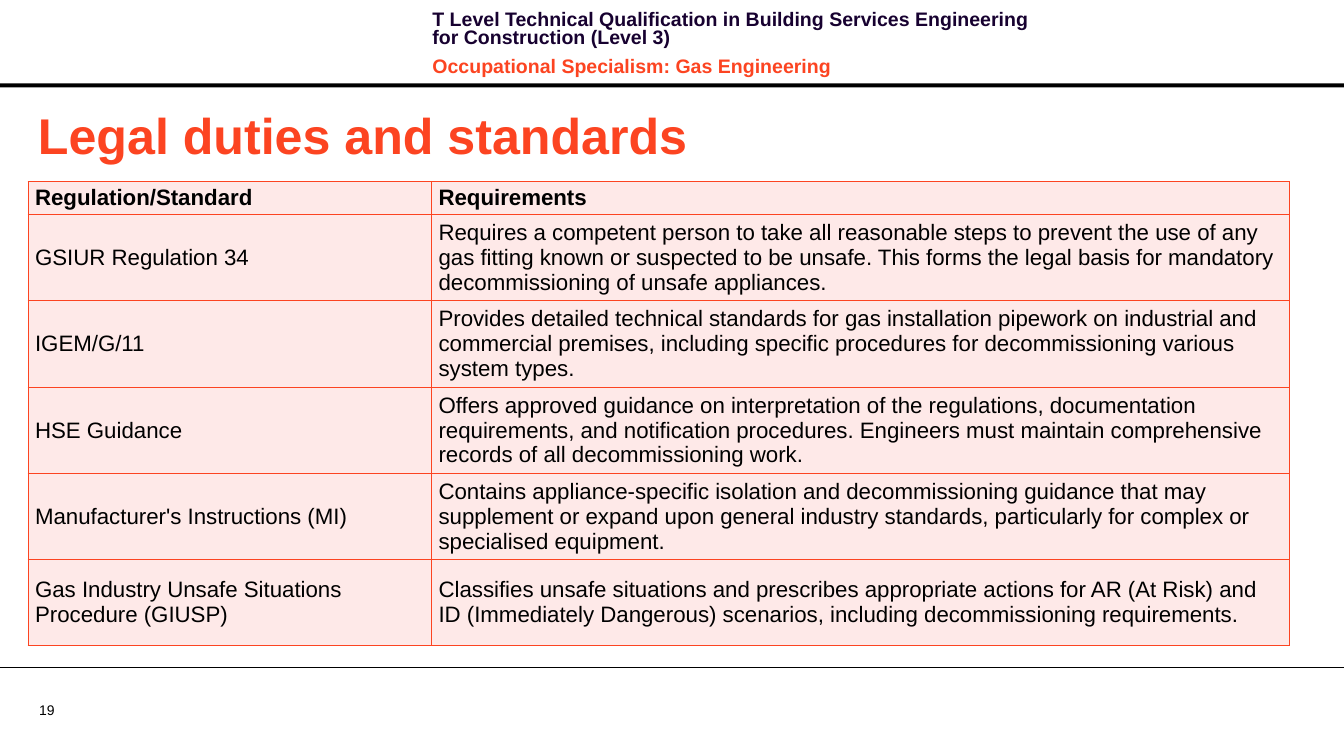
from dataclasses import dataclass

from lxml import etree
from pptx import Presentation
from pptx.dml.color import RGBColor
from pptx.enum.shapes import MSO_CONNECTOR, MSO_SHAPE
from pptx.enum.text import MSO_ANCHOR
from pptx.oxml.ns import qn
from pptx.slide import Slide
from pptx.table import _Cell
from pptx.text.text import _Paragraph
from pptx.util import Emu, Pt

PX = 9144
FONT = "Arial"
BLACK = RGBColor(0x00, 0x00, 0x00)
NAVY = RGBColor(0x17, 0x01, 0x30)
ORANGE = RGBColor(0xFC, 0x44, 0x21)
PINK = RGBColor(0xFE, 0xE9, 0xE8)
TOP, MIDDLE = MSO_ANCHOR.TOP, MSO_ANCHOR.MIDDLE
RECTANGLE = MSO_SHAPE.RECTANGLE
STRAIGHT = MSO_CONNECTOR.STRAIGHT

SLIDE_W, SLIDE_H = 1339, 748
TABLE_X, TABLE_Y = 28, 181
COLUMN_WIDTHS = (402, 855)
HEADER_H, ROW_H = 26, 85


@dataclass
class Line:
    text: str
    size: int
    color: RGBColor
    bold: bool = True


@dataclass
class TextBox:
    x: int
    y: int
    w: int
    h: int
    lines: list[Line]
    inset_x: int = 10
    inset_y: int = 5
    anchor: MSO_ANCHOR = MIDDLE
    line_pt: float | None = None
    gap_pt: int = 0


@dataclass
class Row:
    standard: str
    requirements: str


TEXT_BOXES = [
    TextBox(421, 7, 637, 64, [
        Line("T Level Technical Qualification in Building Services Engineering "
             "for Construction (Level 3)", 14, NAVY),
        Line("Occupational Specialism: Gas Engineering", 14, ORANGE),
    ], anchor=TOP, line_pt=13.1, gap_pt=4),
    TextBox(28, 98, 1272, 71, [Line("Legal duties and standards", 36, ORANGE)]),
    TextBox(39, 699, 64, 17, [Line("19", 10, BLACK, False)], inset_x=0, inset_y=0),
]

ROWS = [
    Row("Regulation/Standard", "Requirements"),
    Row("GSIUR Regulation 34",
        "Requires a competent person to take all reasonable steps to prevent the use of any "
        "gas fitting known or suspected to be unsafe. This forms the legal basis for "
        "mandatory decommissioning of unsafe appliances."),
    Row("IGEM/G/11",
        "Provides detailed technical standards for gas installation pipework on industrial "
        "and commercial premises, including specific procedures for decommissioning various "
        "system types."),
    Row("HSE Guidance",
        "Offers approved guidance on interpretation of the regulations, documentation "
        "requirements, and notification procedures. Engineers must maintain comprehensive "
        "records of all decommissioning work."),
    Row("Manufacturer's Instructions (MI)",
        "Contains appliance-specific isolation and decommissioning guidance that may "
        "supplement or expand upon general industry standards, particularly for complex or "
        "specialised equipment."),
    Row("Gas Industry Unsafe Situations Procedure (GIUSP)",
        "Classifies unsafe situations and prescribes appropriate actions for AR (At Risk) and "
        "ID (Immediately Dangerous) scenarios, including decommissioning requirements."),
]


def px(n: int) -> Emu:
    return Emu(n * PX)


def write_line(p: _Paragraph, line: Line) -> None:
    p.text = line.text
    p.font.name = FONT
    p.font.size = Pt(line.size)
    p.font.bold = line.bold
    p.font.color.rgb = line.color


def draw_rules(s: Slide) -> None:
    bar = s.shapes.add_shape(RECTANGLE, px(0), px(83), px(SLIDE_W), px(4))
    bar.shadow.inherit = False
    bar.fill.solid()
    bar.fill.fore_color.rgb = BLACK
    bar.line.fill.background()
    rule = s.shapes.add_connector(STRAIGHT, px(0), px(665), px(SLIDE_W), px(665))
    rule.line.color.rgb = BLACK
    rule.line.width = Pt(0.75)
    etree.SubElement(rule._element.spPr, qn("a:effectLst"))


def draw_text(s: Slide, box: TextBox) -> None:
    sp = s.shapes.add_textbox(px(box.x), px(box.y), px(box.w), px(box.h))
    tf = sp.text_frame
    tf.word_wrap = True
    tf.vertical_anchor = box.anchor
    tf.margin_left = tf.margin_right = px(box.inset_x)
    tf.margin_top = tf.margin_bottom = px(box.inset_y)
    for i, line in enumerate(box.lines):
        p = tf.add_paragraph() if i else tf.paragraphs[0]
        write_line(p, line)
        p.space_before = Pt(box.gap_pt if i else 0)
        p.space_after = Pt(box.gap_pt)
        if box.line_pt:
            p.line_spacing = Pt(box.line_pt)


def style_cell(cell: _Cell) -> None:
    cell.vertical_anchor = MIDDLE
    cell.margin_left = cell.margin_right = px(7)
    cell.margin_top = cell.margin_bottom = px(3)
    tc_pr = cell._tc.get_or_add_tcPr()
    for side in ("lnL", "lnR", "lnT", "lnB"):
        ln = etree.SubElement(tc_pr, qn(f"a:{side}"), w=str(Pt(1)))
        fill = etree.SubElement(ln, qn("a:solidFill"))
        etree.SubElement(fill, qn("a:srgbClr"), val=str(ORANGE))
    cell.fill.solid()
    cell.fill.fore_color.rgb = PINK


def draw_table(s: Slide) -> None:
    height = HEADER_H + ROW_H * (len(ROWS) - 1)
    table = s.shapes.add_table(len(ROWS), len(COLUMN_WIDTHS), px(TABLE_X), px(TABLE_Y),
                               px(sum(COLUMN_WIDTHS)), px(height)).table
    table.first_row = table.horz_banding = False
    for column, width in zip(table.columns, COLUMN_WIDTHS):
        column.width = px(width)
    for i, row in enumerate(ROWS):
        table.rows[i].height = px(ROW_H if i else HEADER_H)
        for j, text in enumerate((row.standard, row.requirements)):
            cell = table.cell(i, j)
            style_cell(cell)
            write_line(cell.text_frame.paragraphs[0], Line(text, 16, BLACK, i == 0))


def main() -> None:
    prs = Presentation()
    prs.slide_width, prs.slide_height = px(SLIDE_W), px(SLIDE_H)
    s = prs.slides.add_slide(prs.slide_layouts[6])
    draw_rules(s)
    for box in TEXT_BOXES:
        draw_text(s, box)
    draw_table(s)
    prs.save("out.pptx")


if __name__ == "__main__":
    main()
